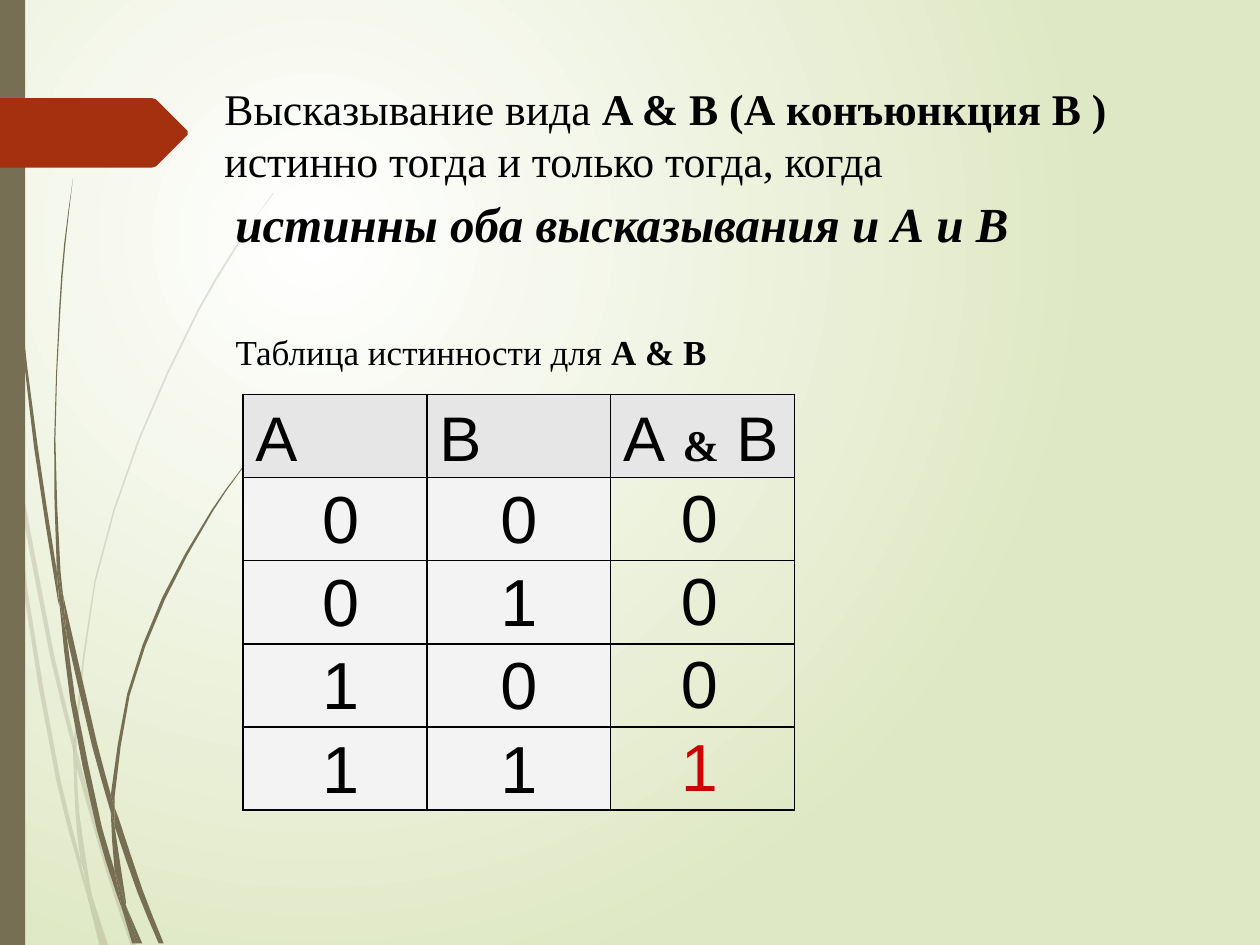
from math import dist

from lxml.etree import SubElement
from pptx import Presentation
from pptx.dml.color import RGBColor
from pptx.enum.shapes import MSO_SHAPE
from pptx.enum.text import MSO_ANCHOR, MSO_AUTO_SIZE, PP_ALIGN
from pptx.oxml.ns import qn
from pptx.util import Cm, Pt

COLORS = {
    "center": "FFFFFF", "edge": "DFE8C4", "olive": "766F54", "rust": "A53010",
    "header": "E6E6E6", "input": "F3F3F3", "ink": "000000", "true": "CC0000",
}
SERIF, SANS = "Times New Roman", "Arial"
BODY = {"name": SERIF, "size": Pt(25), "bold": False}
STRONG = BODY | {"bold": True}
CONCLUSION = {"name": SERIF, "size": Pt(28), "bold": True, "italic": True}
CAPTION = {"name": SERIF, "size": Pt(20)}
HEADER = {"name": SANS, "size": Pt(36)}
DIGIT = {"name": SANS, "size": Pt(38)}

WISP_UNITS = 217
PALE_WISPS = [
    ([(8, 350), (6, 322), (0, 282)], [(0, 299), (7, 344), (8, 350)]),
    ([(12, 376), (40, 522), (59, 599)], [(59, 586), (43, 520), (10, 345)]),
    ([(61, 610), (85, 694), (104, 751)], [(108, 751), (88, 692), (64, 607), (61, 596)]),
    ([(73, 711), (83, 751)], [(86, 751), (73, 711)]),
    ([(8, 350), (19, 470), (45, 621), (64, 693), (70, 714)],
     [(69, 707), (64, 683), (48, 619), (22, 469), (12, 376), (8, 350)]),
    ([(58, 599), (60, 646), (64, 683), (67, 692), (73, 711)],
     [(72, 706), (63, 646), (61, 610), (61, 608), (58, 599)]),
    ([(61, 596), (61, 584), (76, 462), (111, 349), (159, 245), (187, 198), (201, 175), (217, 154)],
     [(217, 153), (201, 175), (186, 197), (158, 244), (110, 348), (75, 461), (59, 584), (59, 586)]),
    ([(70, 714), (79, 751)], [(82, 751), (70, 714)]),
    ([(58, 599), (61, 608), (61, 610)], [(61, 596), (59, 586), (58, 599)]),
    ([(65, 683), (69, 707), (70, 714), (82, 751)], [(83, 751), (73, 711), (67, 692), (65, 683)]),
]
DARK_WISPS = [
    ([(2, 0), (3, 48), (5, 110), (14, 233), (27, 355), (46, 477), (47, 481)],
     [(45, 453), (30, 355), (15, 232), (6, 109), (4, 48), (3, 0)]),
    ([(53, 505), (73, 592), (88, 645)], [(88, 633), (88, 631), (77, 590), (50, 472)]),
    ([(91, 656), (109, 708), (126, 749)], [(130, 749), (113, 706), (94, 649), (91, 641)]),
    ([(47, 477), (56, 557), (77, 659), (92, 708), (97, 722)],
     [(96, 717), (91, 691), (81, 657), (60, 556), (53, 505), (47, 477)]),
    ([(49, 472), (45, 449), (43, 349), (47, 245), (51, 193), (58, 141)],
     [(58, 141), (52, 193), (48, 245), (44, 349), (48, 453), (50, 472)]),
    ([(100, 719), (110, 749)], [(113, 749), (100, 719)]),
    ([(45, 449), (45, 453), (47, 477), (53, 505)], [(50, 472), (49, 472), (45, 449)]),
    ([(91, 641), (91, 633), (103, 552), (131, 476), (169, 406), (191, 374), (203, 359), (216, 344)],
     [(215, 344), (203, 358), (191, 373), (168, 405), (129, 474), (101, 551), (88, 631)]),
    ([(97, 722), (105, 749)], [(108, 749), (97, 722)]),
    ([(88, 645), (91, 691), (96, 706), (100, 719)], [(100, 716), (91, 656), (90, 651), (88, 645)]),
    ([(88, 631), (88, 645), (90, 651), (91, 656)], [(91, 641), (88, 631)]),
    ([(91, 691), (96, 717), (97, 722), (108, 749)], [(110, 749), (100, 719), (96, 706), (91, 691)]),
]
RIBBON = [(0, 0), (121, 0), (124, 1), (149, 26), (149, 29), (124, 54), (121, 55), (0, 55)]


def rgb(color):
    """Return the named colour of the palette."""
    return RGBColor.from_string(COLORS[color])


def add_runs(paragraph, runs, color="ink"):
    """Append (text, format) runs to a paragraph."""
    for text, style in runs:
        run = paragraph.add_run()
        run.text = text
        for key, value in style.items():
            setattr(run.font, key, value)
        run.font.color.rgb = rgb(color)


def paint(shape, color, alpha=None):
    """Give a shape a flat fill without outline or shadow."""
    shape.shadow.inherit = False
    shape.line.fill.background()
    shape.fill.solid()
    shape.fill.fore_color.rgb = rgb(color)
    if alpha:
        tint = shape.element.spPr.find(f"{qn('a:solidFill')}/{qn('a:srgbClr')}")
        SubElement(tint, qn("a:alpha"), val=str(alpha * 1000))


def smooth(edge):
    """Return the anchors of an edge with curve midpoints between them."""
    last = len(edge) - 1
    spans = [dist(a, b) for a, b in zip(edge, edge[1:])]
    slopes = []
    for i in range(last + 1):
        before, after = max(i - 1, 0), min(i + 1, last)
        length = sum(spans[before:after])
        slopes.append([(b - a) / length for a, b in zip(edge[before], edge[after])])
    points = [edge[0]]
    for i, span in enumerate(spans):
        if last > 1 and span > 30:
            points.append(tuple(
                (edge[i][k] + edge[i + 1][k]) / 2 + span * (slopes[i][k] - slopes[i + 1][k]) / 8
                for k in (0, 1)))
        points.append(edge[i + 1])
    return points


def add_outline(slide, points, left, top, scale, color, alpha=None):
    """Draw a closed outline whose points are multiples of scale."""
    fine = [(10 * x, 10 * y) for x, y in points]
    builder = slide.shapes.build_freeform(*fine[0], scale=scale / 10)
    builder.add_line_segments(fine[1:], close=True)
    paint(builder.convert_to_shape(left, top), color, alpha)


def add_background(slide):
    """Fill the background with a round gradient."""
    fill = slide.background.fill
    fill.gradient()
    for stop, color in zip(fill.gradient_stops, ("center", "edge")):
        stop.color.rgb = rgb(color)
    gradient = slide.element.find(f".//{qn('a:gradFill')}")
    gradient.remove(gradient.find(qn("a:lin")))
    circle = SubElement(gradient, qn("a:path"), {"path": "circle"})
    SubElement(circle, qn("a:fillToRect"), l="50000", t="50000", r="100000", b="100000")


def add_decoration(slide, left, top, width, height):
    """Draw the wisps, the side bar and the ribbon."""
    scale = width / WISP_UNITS
    for wisps, alpha in ((PALE_WISPS, 20), (DARK_WISPS, None)):
        for there, back in wisps:
            add_outline(slide, smooth(there) + smooth(back), left, top, scale, "olive", alpha)
    bar = slide.shapes.add_shape(MSO_SHAPE.RECTANGLE, left, top, Cm(0.51), height)
    paint(bar, "olive")
    add_outline(slide, RIBBON, left, top + Cm(1.98), scale, "rust")


def add_title(slide, left, top, width, height):
    """Place the definition of conjunction in the title."""
    title = slide.shapes.title
    title.element.getparent().append(title.element)
    title.left, title.top, title.width, title.height = left, top, width, height
    frame = title.text_frame
    frame.word_wrap, frame.auto_size = True, MSO_AUTO_SIZE.NONE
    frame.vertical_anchor = MSO_ANCHOR.TOP
    rule, conclusion = frame.paragraphs[0], frame.add_paragraph()
    for paragraph, gap in ((rule, 1.5), (conclusion, 4)):
        paragraph.alignment = PP_ALIGN.LEFT
        paragraph.line_spacing, paragraph.space_before = 1.0, Pt(gap)
    add_runs(rule, [("Высказывание вида ", BODY),
                    ("A & B (А конъюнкция B ) ", STRONG),
                    ("истинно тогда и только тогда, когда", BODY)])
    add_runs(conclusion, [(" ", STRONG),
                          ("истинны оба высказывания и А и B", CONCLUSION)])


def add_caption(slide, left, top, width, height):
    """Write the caption of the truth table."""
    frame = slide.shapes.add_textbox(left, top, width, height).text_frame
    frame.word_wrap = True
    add_runs(frame.paragraphs[0], [("Таблица истинности для", CAPTION),
                                   (" А & В", CAPTION | {"bold": True})])


def format_cell(cell, color, margins):
    """Set the fill, margins and black borders of a cell."""
    cell.vertical_anchor = MSO_ANCHOR.MIDDLE
    for side, margin in zip(("left", "top", "right", "bottom"), margins):
        setattr(cell, f"margin_{side}", Cm(margin))
    if color:
        cell.fill.solid()
        cell.fill.fore_color.rgb = rgb(color)
    else:
        cell.fill.background()
    properties = cell._tc.get_or_add_tcPr()
    for i, side in enumerate("LRTB"):
        border = SubElement(properties, qn(f"a:ln{side}"), w=str(Pt(1)))
        ink = SubElement(border, qn("a:solidFill"))
        SubElement(ink, qn("a:srgbClr"), val=COLORS["ink"])
        properties.insert(i, border)


def add_truth_table(slide, left, top, width, height):
    """Build the truth table of A & B."""
    table = slide.shapes.add_table(5, 3, left, top, width, height).table
    table.first_row = table.horz_banding = False
    headings = [[("A", HEADER)], [("B", HEADER)],
                [("А ", HEADER), ("&", STRONG), (" B", HEADER)]]
    for column, heading in enumerate(headings):
        cell = table.cell(0, column)
        format_cell(cell, "header", (0.25, 0.15, 0, 0))
        add_runs(cell.text_frame.paragraphs[0], heading)
    for row in range(1, 5):
        a, b = divmod(row - 1, 2)
        for column, (value, indent) in enumerate(zip((a, b, a & b), (0.48, 0.25, 0.12))):
            cell = table.cell(row, column)
            format_cell(cell, "input" if column < 2 else None,
                        (indent, 0.06 if column < 2 else 0, 0.25, 0))
            paragraph = cell.text_frame.paragraphs[0]
            paragraph.alignment = PP_ALIGN.CENTER
            add_runs(paragraph, [(str(value), DIGIT)],
                     "true" if column == 2 and value else "ink")


def main():
    """Build and save the slide."""
    deck = Presentation()
    deck.slide_width, deck.slide_height = Cm(25.4), Cm(19.05)
    slide = deck.slides.add_slide(deck.slide_layouts[5])
    add_background(slide)
    add_decoration(slide, 0, 0, Cm(5.51), deck.slide_height)
    add_title(slide, Cm(4.27), Cm(1.52), Cm(19.23), Cm(3.73))
    add_truth_table(slide, Cm(4.9), Cm(7.95), Cm(11.12), Cm(8.38))
    add_caption(slide, Cm(4.5), Cm(6.53), Cm(12.19), Cm(1.09))
    deck.save("out.pptx")


if __name__ == "__main__":
    main()
